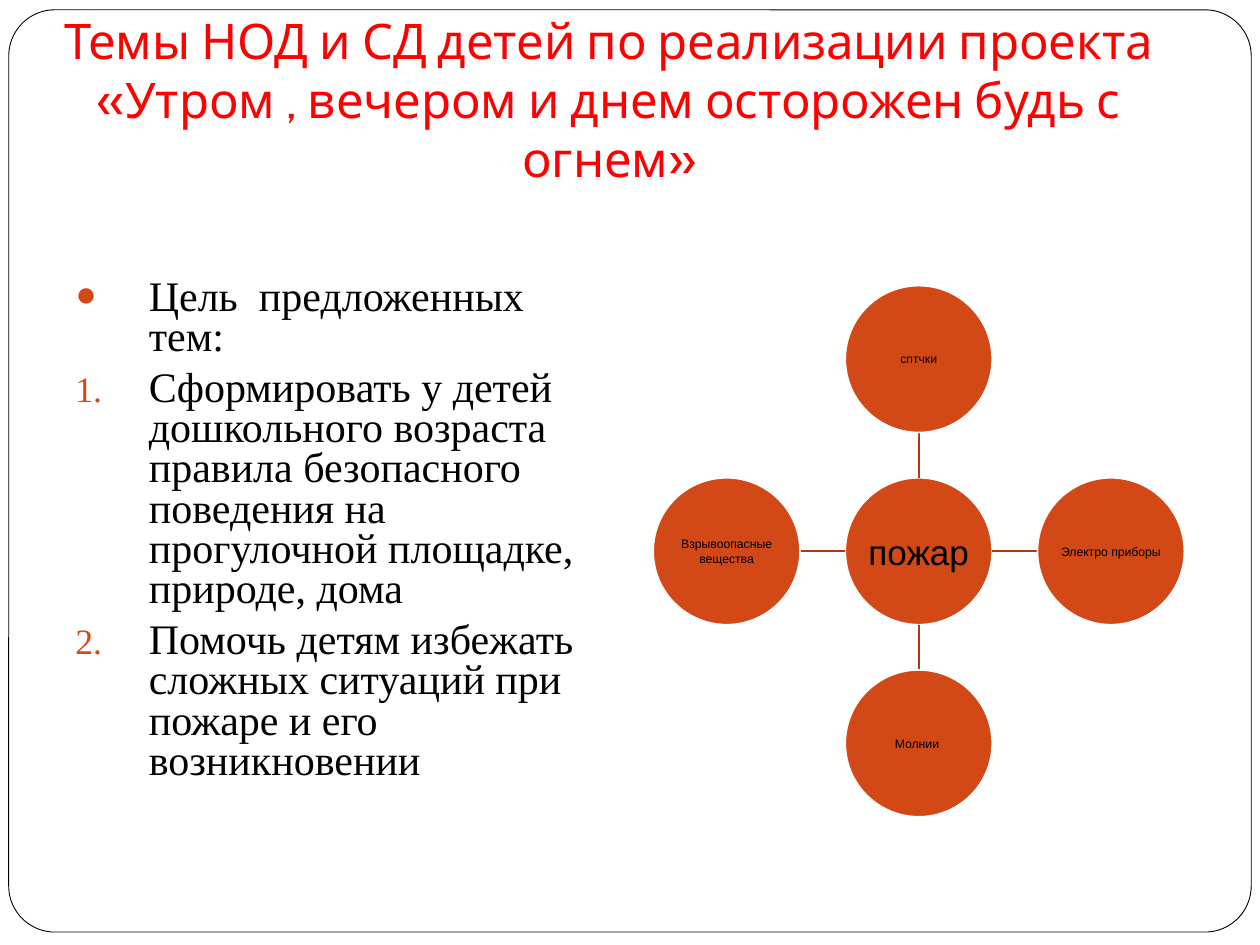
from dataclasses import dataclass

from lxml import etree
from pptx import Presentation
from pptx.dml.color import RGBColor
from pptx.enum.shapes import MSO_CONNECTOR, MSO_SHAPE
from pptx.enum.text import MSO_ANCHOR, MSO_AUTO_SIZE, PP_ALIGN
from pptx.oxml.ns import qn
from pptx.util import Pt

STRAIGHT = MSO_CONNECTOR.STRAIGHT
OVAL, ROUNDED = MSO_SHAPE.OVAL, MSO_SHAPE.ROUNDED_RECTANGLE
CENTER = PP_ALIGN.CENTER
MIDDLE, BOTTOM = MSO_ANCHOR.MIDDLE, MSO_ANCHOR.BOTTOM
NO_FIT = MSO_AUTO_SIZE.NONE


@dataclass(frozen=True)
class Theme:
    paper: str = "FFFFFF"
    ink: str = "000000"
    heading: str = "FF0000"
    accent: str = "D34817"
    spoke: str = "A93A12"
    heading_font: str = "Cabin"
    goal_font: str = "Times New Roman"
    diagram_font: str = "Arial"
    heading_size: float = 28
    goal_size: float = 24
    hub_size: float = 20
    hazard_size: float = 7


@dataclass(frozen=True)
class Goal:
    text: str
    numbered: bool = True


@dataclass(frozen=True)
class Hazard:
    label: str
    dx: int  # direction from the hub
    dy: int


THEME = Theme()
HUB_X, HUB_Y = 525, 315
RADIUS, REACH = 42, 109.8
HANGING = 42

GOALS = [
    Goal("Цель  предложенных тем:", numbered=False),
    Goal("Сформировать у детей дошкольного возраста правила безопасного "
         "поведения на прогулочной площадке, природе, дома"),
    Goal("Помочь детям избежать сложных ситуаций при пожаре и его возникновении"),
]
HAZARDS = [
    Hazard("сптчки", 0, -1),
    Hazard("Электро приборы", 1, 0),
    Hazard("Молнии ", 0, 1),
    Hazard("Взрывоопасные вещества", -1, 0),
]


def rgb(value: str) -> RGBColor:
    return RGBColor.from_string(value)


def set_font(paragraph, name: str, size: float, color: str) -> None:
    font = paragraph.font
    font.name, font.size = name, Pt(size)
    font.color.rgb = rgb(color)


def paint(shape, fill: str, line: str, width: float) -> None:
    shape.shadow.inherit = False
    shape.fill.solid()
    shape.fill.fore_color.rgb = rgb(fill)
    shape.line.color.rgb = rgb(line)
    shape.line.width = Pt(width)


def add_frame(slide) -> None:
    frame = slide.shapes.add_shape(ROUNDED, Pt(5), Pt(5.6), Pt(710), Pt(527))
    frame.adjustments[0] = 0.05
    paint(frame, THEME.paper, THEME.ink, 0.5)
    slide.shapes._spTree.insert(2, frame._element)  # behind the title


def add_heading(slide, text: str) -> None:
    heading = slide.shapes.title
    heading.left, heading.top = Pt(24), Pt(36)
    heading.width, heading.height = Pt(648), Pt(78)
    frame = heading.text_frame
    frame.text = text
    frame.word_wrap, frame.auto_size = True, NO_FIT
    frame.vertical_anchor = BOTTOM
    frame.margin_bottom = Pt(7.2)
    paragraph = frame.paragraphs[0]
    paragraph.alignment = CENTER
    set_font(paragraph, THEME.heading_font, THEME.heading_size, THEME.heading)


def add_bullet(paragraph, numbered: bool) -> None:
    props = paragraph._p.get_or_add_pPr()
    props.set("marL", str(Pt(HANGING)))
    props.set("indent", str(-Pt(HANGING)))
    color = etree.SubElement(props, qn("a:buClr"))
    etree.SubElement(color, qn("a:srgbClr"), val=THEME.accent)
    etree.SubElement(props, qn("a:buSzPct"), val="85000")
    etree.SubElement(props, qn("a:buFont"), typeface=THEME.goal_font)
    if numbered:
        etree.SubElement(props, qn("a:buAutoNum"), type="arabicPeriod")
    else:
        etree.SubElement(props, qn("a:buChar"), char="●")


def add_goals(slide, goals: list[Goal]) -> None:
    box = slide.shapes.add_textbox(Pt(36), Pt(156), Pt(318), Pt(306))
    frame = box.text_frame
    frame.word_wrap = True
    for index, goal in enumerate(goals):
        paragraph = frame.add_paragraph() if index else frame.paragraphs[0]
        paragraph.text = goal.text
        paragraph.line_spacing = 0.8
        paragraph.space_before = Pt(5.8)
        add_bullet(paragraph, goal.numbered)
        set_font(paragraph, THEME.goal_font, THEME.goal_size, THEME.ink)


def add_circle(slide, x: float, y: float, label: str, size: float) -> None:
    circle = slide.shapes.add_shape(
        OVAL, Pt(x - RADIUS), Pt(y - RADIUS), Pt(2 * RADIUS), Pt(2 * RADIUS))
    paint(circle, THEME.accent, THEME.paper, 1)
    frame = circle.text_frame
    frame.word_wrap, frame.vertical_anchor = True, MIDDLE
    frame.margin_left = frame.margin_right = 0
    frame.margin_top = frame.margin_bottom = 0
    paragraph = frame.paragraphs[0]
    paragraph.text, paragraph.alignment = label, CENTER
    set_font(paragraph, THEME.diagram_font, size, THEME.ink)


def add_spoke(slide, hazard: Hazard) -> None:
    near, far = RADIUS, REACH - RADIUS
    spoke = slide.shapes.add_connector(
        STRAIGHT,
        Pt(HUB_X + near * hazard.dx), Pt(HUB_Y + near * hazard.dy),
        Pt(HUB_X + far * hazard.dx), Pt(HUB_Y + far * hazard.dy))
    spoke.line.color.rgb = rgb(THEME.spoke)
    spoke.line.width = Pt(1)
    etree.SubElement(spoke._element.spPr, qn("a:effectLst"))


def main() -> None:
    prs = Presentation()
    prs.slide_width, prs.slide_height = Pt(720), Pt(540)
    slide = prs.slides.add_slide(prs.slide_layouts[5])

    # Page frame, heading and goals
    add_frame(slide)
    add_heading(slide, "Темы НОД и СД детей по реализации проекта "
                       "«Утром , вечером и днем осторожен будь с огнем»")
    add_goals(slide, GOALS)

    # Fire hazards around the hub
    add_circle(slide, HUB_X, HUB_Y, "пожар", THEME.hub_size)
    for hazard in HAZARDS:
        add_spoke(slide, hazard)
        add_circle(slide, HUB_X + REACH * hazard.dx, HUB_Y + REACH * hazard.dy,
                   hazard.label, THEME.hazard_size)

    prs.save("out.pptx")


if __name__ == "__main__":
    main()
